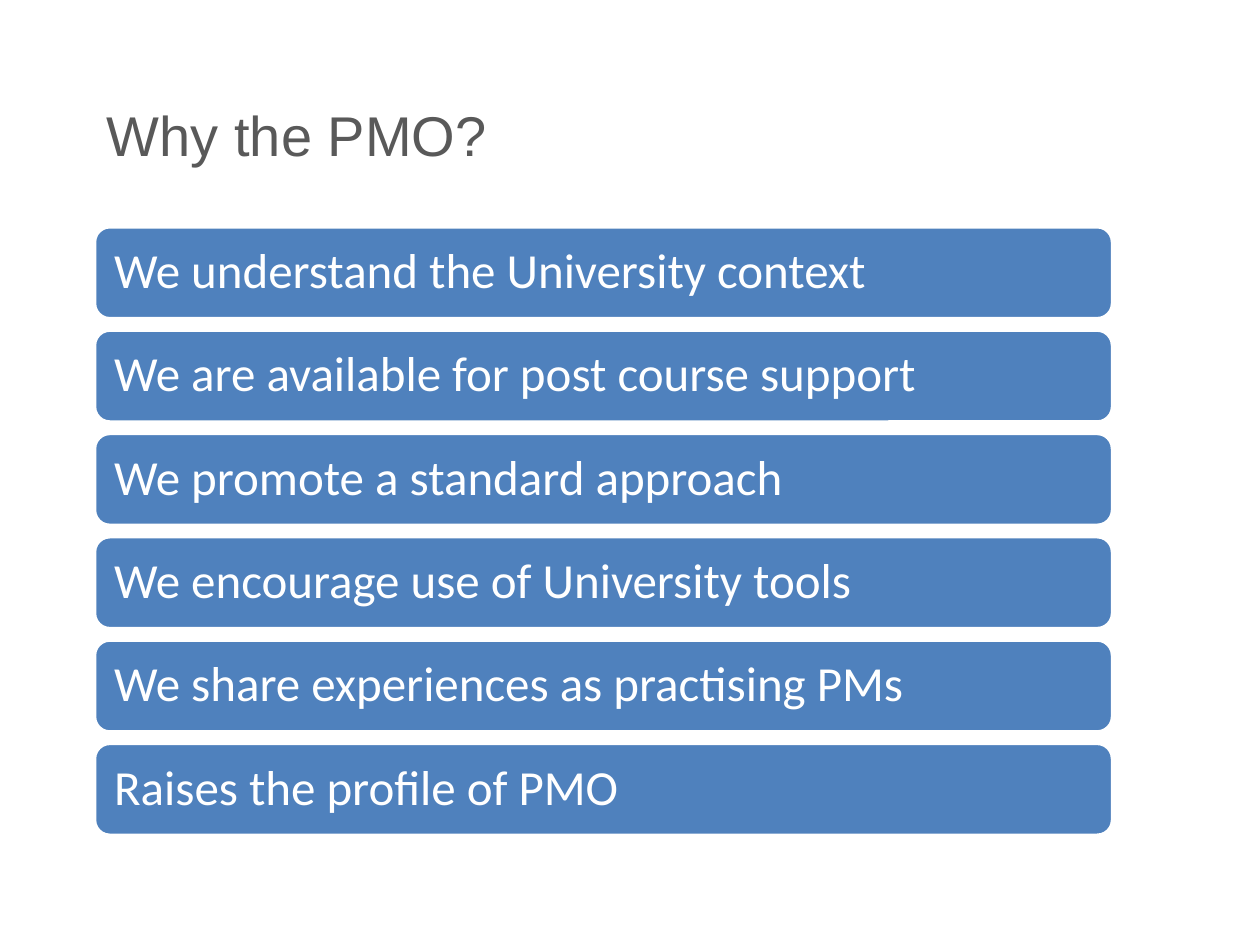
from pptx import Presentation
from pptx.dml.color import RGBColor
from pptx.enum.shapes import MSO_SHAPE
from pptx.enum.text import MSO_ANCHOR, PP_ALIGN
from pptx.util import Inches, Pt

GREY = RGBColor(0x59, 0x59, 0x59)
BLUE = RGBColor(0x4F, 0x81, 0xBD)
WHITE = RGBColor(0xFF, 0xFF, 0xFF)

LEFT, WIDTH = 0.75, 8.08
TOP, STEP, HEIGHT = 1.8, 0.82, 0.73
REASONS = [
    "We understand the University context",
    "We are available for post course support",
    "We promote a standard approach",
    "We encourage use of University tools",
    "We share experiences as practising PMs",
    "Raises the profile of PMO",
]


class Deck:
    title_font = {"name": "Arial", "size": Pt(32)}
    bar_font = {"name": "Calibri", "size": Pt(28)}
    bar_frame = {
        "word_wrap": True,
        "vertical_anchor": MSO_ANCHOR.MIDDLE,
        "margin_left": Inches(0.12),
        "margin_right": Inches(0.12),
        "margin_top": Inches(0.12),
        "margin_bottom": Inches(0.12),
    }
    title_frame = {"word_wrap": True, "vertical_anchor": MSO_ANCHOR.TOP}

    def __init__(self):
        self.prs = Presentation()
        self.prs.slide_width = Inches(10)
        self.prs.slide_height = Inches(7.5)
        self.slide = self.prs.slides.add_slide(self.prs.slide_layouts[6])

    def label(self, shape, text, frame, font, color):
        """Put one left-aligned paragraph in the shape."""
        box = shape.text_frame
        box.text = text
        para = box.paragraphs[0]
        para.alignment = PP_ALIGN.LEFT
        for target, style in ((box, frame), (para.font, font)):
            for key, value in style.items():
                setattr(target, key, value)
        para.font.color.rgb = color
        return para

    def title(self, text, *place):
        box = self.slide.shapes.add_textbox(*map(Inches, place))
        self.label(box, text, self.title_frame, self.title_font, GREY)

    def bar(self, text, *place):
        bar = self.slide.shapes.add_shape(
            MSO_SHAPE.ROUNDED_RECTANGLE, *map(Inches, place))
        bar.shadow.inherit = False
        bar.fill.solid()
        bar.fill.fore_color.rgb = BLUE
        bar.line.color.rgb = WHITE
        bar.line.width = Pt(2)
        para = self.label(bar, text, self.bar_frame, self.bar_font, WHITE)
        para.line_spacing = 0.9


def main():
    deck = Deck()
    deck.title("Why the PMO?", LEFT, 0.75, WIDTH, 0.8)
    for row, text in enumerate(REASONS):
        deck.bar(text, LEFT, TOP + row * STEP, WIDTH, HEIGHT)
    deck.prs.save("out.pptx")


if __name__ == "__main__":
    main()
